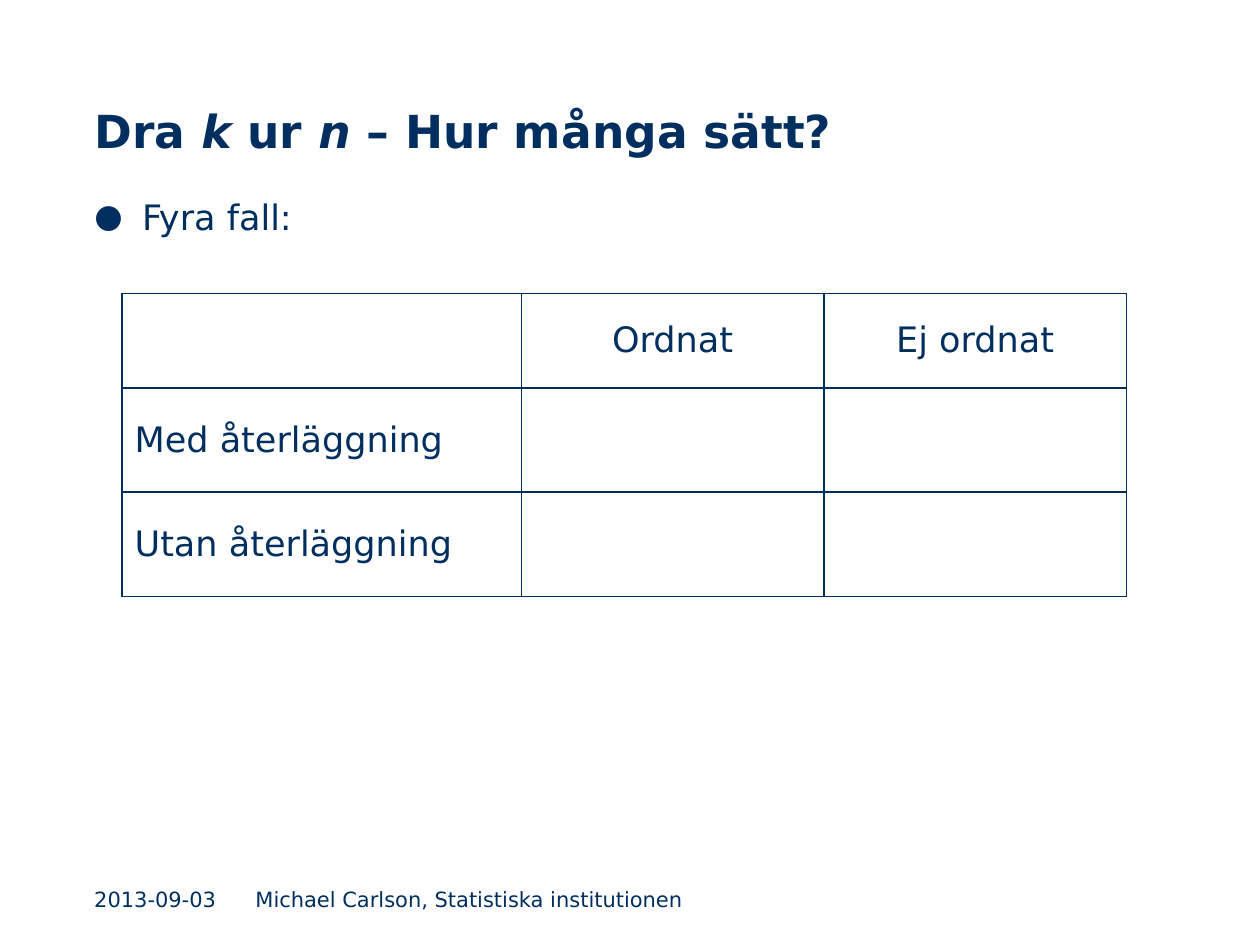
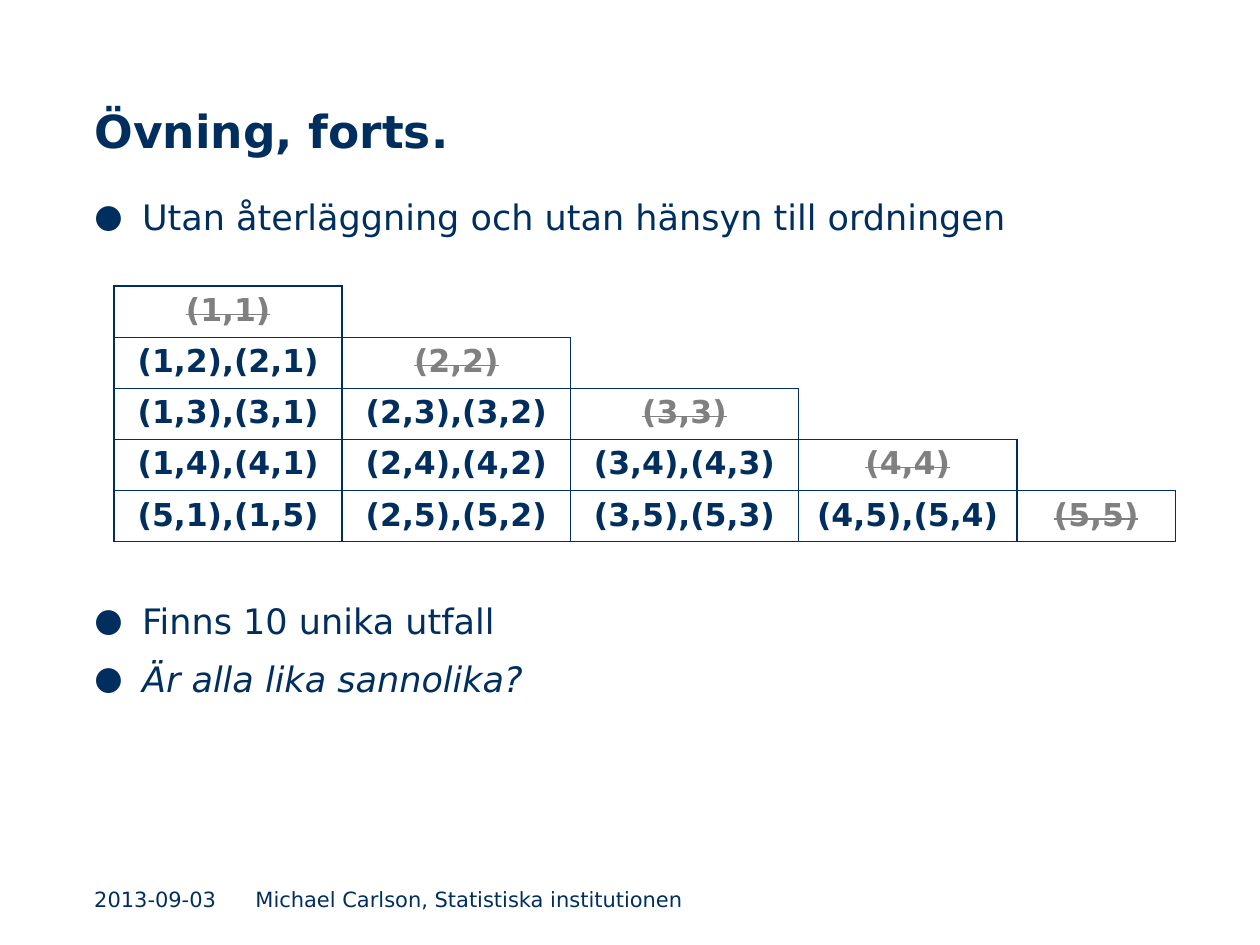
from lxml.etree import SubElement
from pptx import Presentation
from pptx.dml.color import RGBColor
from pptx.enum.text import MSO_ANCHOR as Anchor, MSO_AUTO_SIZE as AutoSize, PP_ALIGN as Align
from pptx.oxml.ns import qn
from pptx.util import Cm, Pt

NAVY = "002F5F"
GREY = "808080"
FONT = "DejaVu Sans"
TITLE_BOX = (1.65, 1.09, 22.07, 2.21)
BODY_BOX = (1.65, 3.63, 22.07, 11.99)
FOOTER_BOX = (1.65, 17.73, 15.72, 0.79)
DATE_WIDTH = 3.12
AUTHOR_OFFSET = 3.25
LINE_HEIGHT = 29
PARAGRAPH_GAP = 4
ALL_EDGES = "LRTB"

FOUR_CASES = [
    ["", "Ordnat", "Ej ordnat"],
    ["Med återläggning", "", ""],
    ["Utan återläggning", "", ""],
]
OUTCOMES = [
    ["(1,1)"],
    ["(1,2),(2,1)", "(2,2)"],
    ["(1,3),(3,1)", "(2,3),(3,2)", "(3,3)"],
    ["(1,4),(4,1)", "(2,4),(4,2)", "(3,4),(4,3)", "(4,4)"],
    ["(5,1),(1,5)", "(2,5),(5,2)", "(3,5),(5,3)", "(4,5),(5,4)", "(5,5)"],
]


def color(hex_text):
    return RGBColor.from_string(hex_text)


def place(shape, box):
    shape.left, shape.top, shape.width, shape.height = map(Cm, box)


def style_font(font, size, hex_text=NAVY, bold=False):
    font.name = FONT
    font.size = Pt(size)
    font.bold = bold
    font.color.rgb = color(hex_text)


def add_title(slide, box, runs):
    title = slide.shapes.title
    place(title, box)
    frame = title.text_frame
    frame.auto_size = AutoSize.NONE
    frame.vertical_anchor = Anchor.BOTTOM
    paragraph = frame.paragraphs[0]
    paragraph.alignment = Align.LEFT
    style_font(paragraph.font, 26, bold=True)
    for text, italic in runs:
        run = paragraph.add_run()
        run.text = text
        run.font.italic = italic


def add_bullet(paragraph):
    properties = paragraph._p.get_or_add_pPr()
    properties.set("marL", str(Cm(0.96)))
    properties.set("indent", str(-Cm(0.96)))
    SubElement(properties, qn("a:buSzPct"), val="93000")
    SubElement(properties, qn("a:buFont"), typeface=FONT)
    SubElement(properties, qn("a:buChar"), char="●")


def add_body(slide, box, items):
    body = slide.placeholders[1]
    place(body, box)
    frame = body.text_frame
    frame.auto_size = AutoSize.NONE
    for index, (text, space_before, italic) in enumerate(items):
        paragraph = frame.add_paragraph() if index else frame.paragraphs[0]
        paragraph.text = text
        add_bullet(paragraph)
        paragraph.line_spacing = Pt(LINE_HEIGHT)
        paragraph.space_before = Pt(space_before)
        style_font(paragraph.font, 20)
        paragraph.font.italic = italic


def add_footer(slide, box):
    left, top, width, height = box
    parts = [
        ("2013-09-03", left, DATE_WIDTH),
        ("Michael Carlson, Statistiska institutionen",
         left + AUTHOR_OFFSET, width - AUTHOR_OFFSET),
    ]
    for text, part_left, part_width in parts:
        label = slide.shapes.add_textbox(*map(Cm, (part_left, top, part_width, height)))
        frame = label.text_frame
        frame.word_wrap = True
        frame.vertical_anchor = Anchor.MIDDLE
        paragraph = frame.paragraphs[0]
        paragraph.text = text
        style_font(paragraph.font, 12)


def set_borders(cell, edges):
    properties = cell._tc.get_or_add_tcPr()
    for edge in ALL_EDGES:
        line = SubElement(properties, qn(f"a:ln{edge}"), w=str(Pt(1)))
        if edge in edges:
            fill = SubElement(line, qn("a:solidFill"))
            SubElement(fill, qn("a:srgbClr"), val=NAVY)
        else:
            SubElement(line, qn("a:noFill"))


def add_grid(slide, corner, widths, heights):
    box = (*corner, sum(widths), sum(heights))
    frame = slide.shapes.add_table(len(heights), len(widths), *map(Cm, box))
    table = frame.table
    table.first_row = table.horz_banding = False
    for column, width in zip(table.columns, widths):
        column.width = Cm(width)
    for row, height in zip(table.rows, heights):
        row.height = Cm(height)
    return table


def fill_cell(cell, text, edges, size, alignment, hex_text=NAVY, bold=False):
    set_borders(cell, edges)
    cell.fill.background()
    paragraph = cell.text_frame.paragraphs[0]
    paragraph.text = text
    paragraph.alignment = alignment
    style_font(paragraph.font, size, hex_text, bold)


def add_cases_table(slide, corner):
    table = add_grid(slide, corner, [8.05, 6.1, 6.1], [1.9, 2.1, 2.1])
    for row, texts in enumerate(FOUR_CASES):
        for column, text in enumerate(texts):
            cell = table.cell(row, column)
            cell.vertical_anchor = Anchor.MIDDLE
            alignment = Align.CENTER if column else Align.LEFT
            fill_cell(cell, text, ALL_EDGES, 20, alignment)


def add_outcomes_table(slide, corner):
    widths = [4.6, 4.6, 4.6, 4.4, 3.2]
    table = add_grid(slide, corner, widths, [1.03] * len(OUTCOMES))
    for row, pairs in enumerate(OUTCOMES):
        for column in range(len(widths)):
            cell = table.cell(row, column)
            if column <= row:
                on_diagonal = column == row
                fill_cell(cell, pairs[column], ALL_EDGES, 18, Align.CENTER,
                          GREY if on_diagonal else NAVY, bold=True)
                if on_diagonal:
                    run = cell.text_frame.paragraphs[0].runs[0]
                    run._r.get_or_add_rPr().set("strike", "sngStrike")
            else:
                fill_cell(cell, "", "LB" if column == row + 1 else "", 18, Align.CENTER)


def add_slide(presentation, title_runs, items):
    slide = presentation.slides.add_slide(presentation.slide_layouts[1])
    add_title(slide, TITLE_BOX, title_runs)
    add_body(slide, BODY_BOX, items)
    add_footer(slide, FOOTER_BOX)
    return slide


def add_cases_slide(presentation):
    title_runs = [("Dra ", False), ("k", True), (" ur ", False),
                  ("n", True), (" – Hur många sätt?", False)]
    slide = add_slide(presentation, title_runs, [("Fyra fall:", 0, False)])
    add_cases_table(slide, (2.46, 5.92))


def add_exercise_slide(presentation):
    table_gap = 6 * (LINE_HEIGHT + PARAGRAPH_GAP) + PARAGRAPH_GAP
    items = [
        ("Utan återläggning och utan hänsyn till ordningen", 0, False),
        ("Finns 10 unika utfall", table_gap, False),
        ("Är alla lika sannolika?", PARAGRAPH_GAP, True),
    ]
    slide = add_slide(presentation, [("Övning, forts.", False)], items)
    add_outcomes_table(slide, (2.3, 5.77))


def main():
    presentation = Presentation()
    presentation.slide_width = Cm(25.4)
    presentation.slide_height = Cm(19.05)
    add_cases_slide(presentation)
    add_exercise_slide(presentation)
    presentation.save("out.pptx")


if __name__ == "__main__":
    main()
